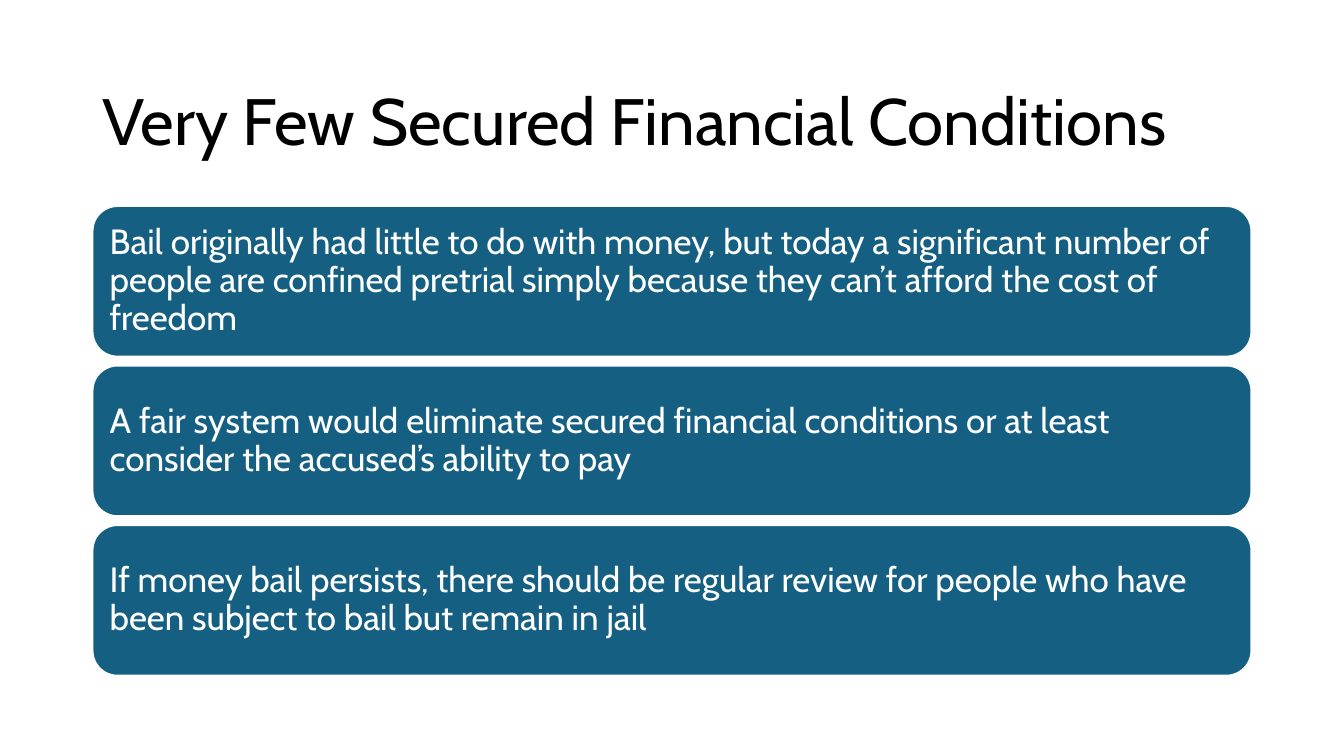
from pptx import Presentation
from pptx.dml.color import RGBColor
from pptx.enum.shapes import MSO_SHAPE
from pptx.enum.text import MSO_ANCHOR, PP_ALIGN
from pptx.util import Cm, Pt

LEFT, WIDTH = Cm(2.33), Cm(29.21)
BOX_TOP, BOX_HEIGHT, BOX_PITCH = 5.19, 3.8, 4.02

POINTS = [
    "Bail originally had little to do with money, but today a significant number of "
    "people are confined pretrial simply because they can’t afford the cost of freedom",
    "A fair system would eliminate secured financial conditions or at least "
    "consider the accused’s ability to pay",
    "If money bail persists, there should be regular review for people who have "
    "been subject to bail but remain in jail",
]


def rgb(value):
    return RGBColor.from_string(value)


def write(shape, text, size, color):
    """Put one left-aligned, vertically centred paragraph into the shape."""
    tf = shape.text_frame
    tf.word_wrap = True
    tf.vertical_anchor = MSO_ANCHOR.MIDDLE
    tf.margin_left = tf.margin_right = Cm(0.25)
    p = tf.paragraphs[0]
    p.text = text
    p.alignment = PP_ALIGN.LEFT
    p.line_spacing = 0.9
    p.font.name = "Cabin"
    p.font.size = Pt(size)
    p.font.color.rgb = rgb(color)


prs = Presentation()
prs.slide_width, prs.slide_height = Cm(33.87), Cm(19.05)
s = prs.slides.add_slide(prs.slide_layouts[6])

title = s.shapes.add_textbox(LEFT, Cm(1.55), WIDTH, Cm(3.15))
write(title, "Very Few Secured Financial Conditions", 46.8, "000000")

for i, point in enumerate(POINTS):
    box = s.shapes.add_shape(MSO_SHAPE.ROUNDED_RECTANGLE, LEFT,
                             Cm(BOX_TOP + i * BOX_PITCH), WIDTH, Cm(BOX_HEIGHT))
    box.shadow.inherit = False
    box.fill.solid()
    box.fill.fore_color.rgb = rgb("156082")
    box.line.color.rgb = rgb("FFFFFF")
    box.line.width = Pt(1.5)
    write(box, point, 25, "FFFFFF")

prs.save("out.pptx")
